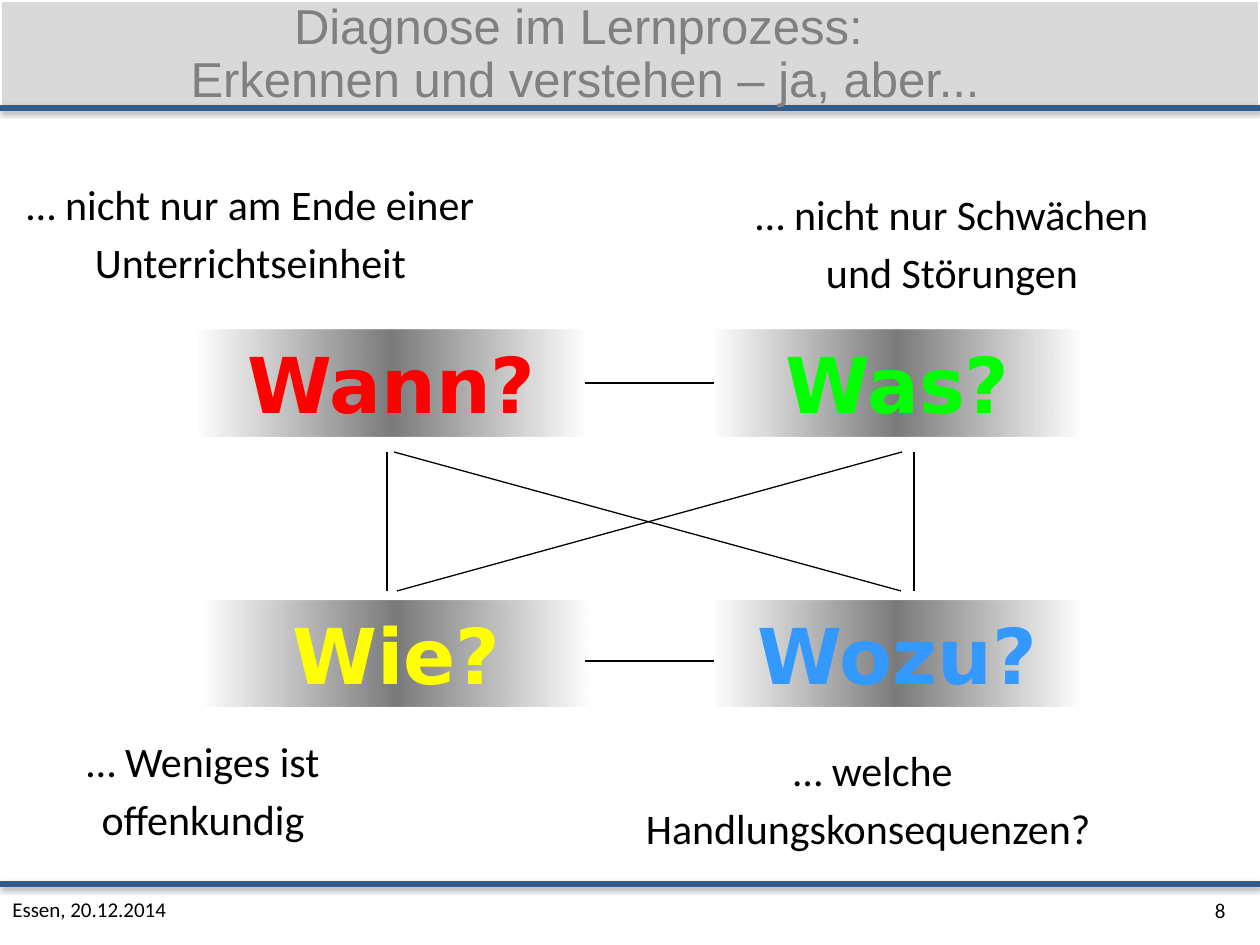
from lxml.etree import SubElement
from pptx import Presentation
from pptx.dml.color import RGBColor
from pptx.enum.shapes import MSO_CONNECTOR, MSO_SHAPE
from pptx.enum.text import MSO_ANCHOR, MSO_AUTO_SIZE, PP_ALIGN
from pptx.oxml import parse_xml
from pptx.oxml.ns import nsdecls, qn
from pptx.util import Emu, Pt

BLACK = RGBColor(0x00, 0x00, 0x00)
WHITE = RGBColor(0xFF, 0xFF, 0xFF)
BAND_GREY = RGBColor(0xD9, 0xD9, 0xD9)
TITLE_GREY = RGBColor(0x80, 0x80, 0x80)
RULE_BLUE = RGBColor(0x34, 0x5A, 0x8A)
RED = RGBColor(0xFF, 0x00, 0x00)
GREEN = RGBColor(0x00, 0xFF, 0x00)
YELLOW = RGBColor(0xFF, 0xFF, 0x00)
SKY = RGBColor(0x33, 0x99, 0xFF)

LEFT_SIDE, RIGHT_SIDE = 1, 3


def px(*lengths):
    return [Emu(round(length * 914400 / 126)) for length in lengths]


class SlideBuilder:
    BODY_FONT = "Calibri"
    WORD_FONT = "DejaVu Sans"
    TITLE_FONT = "Arial"

    def __init__(self, slide):
        self.shapes = slide.shapes

    def set_text(self, shape, text, font, size, color, align=PP_ALIGN.CENTER,
                 anchor=MSO_ANCHOR.TOP, spacing=None, bold=False):
        frame = shape.text_frame
        frame.text = text
        frame.word_wrap = True
        frame.vertical_anchor = anchor
        paragraph = frame.paragraphs[0]
        paragraph.alignment = align
        paragraph.line_spacing = spacing
        paragraph.space_before = Pt(0)
        for run in paragraph.runs:
            run.font.name, run.font.size = font, Pt(size)
            run.font.color.rgb, run.font.bold = color, bold

    def title(self, text, *box):
        title = self.shapes.title
        title.left, title.top, title.width, title.height = px(*box)
        self.set_text(title, text, self.TITLE_FONT, 28, TITLE_GREY,
                      anchor=MSO_ANCHOR.MIDDLE, spacing=0.9)
        title.text_frame.auto_size = MSO_AUTO_SIZE.NONE
        # Bring the title in front of the header band
        self.shapes._spTree.append(title._element)

    def band(self, *box):
        band = self.shapes.add_shape(MSO_SHAPE.RECTANGLE, *px(*box))
        band.shadow.inherit = False
        band.fill.solid()
        band.fill.fore_color.rgb = BAND_GREY
        band.line.color.rgb, band.line.width = WHITE, Pt(2)

    def line(self, x1, y1, x2, y2, color=BLACK, width=0.75):
        line = self.shapes.add_connector(MSO_CONNECTOR.STRAIGHT, *px(x1, y1, x2, y2))
        line.line.color.rgb, line.line.width = color, Pt(width)
        SubElement(line._element.spPr, qn("a:effectLst"))
        return line

    def rule(self, y):
        rule = self.line(0, y, 1260, y, RULE_BLUE, 3)
        rule._element.spPr.find(qn("a:effectLst")).append(parse_xml(
            f'<a:outerShdw {nsdecls("a")} blurRad="39370" dist="20320" dir="5400000"'
            ' rotWithShape="0"><a:srgbClr val="000000"><a:alpha val="38000"/>'
            '</a:srgbClr></a:outerShdw>'))

    def question(self, text, color, *box):
        question = self.shapes.add_shape(MSO_SHAPE.RECTANGLE, *px(*box))
        question.shadow.inherit = False
        question.line.fill.background()
        stops = "".join(
            f'<a:gs pos="{pos}000"><a:srgbClr val="000000"><a:alpha val="{alpha}000"/>'
            '</a:srgbClr></a:gs>' for pos, alpha in ((0, 0), (50, 52), (100, 0)))
        question._element.spPr.find(qn("a:prstGeom")).addnext(parse_xml(
            f'<a:gradFill {nsdecls("a")} rotWithShape="1"><a:gsLst>{stops}</a:gsLst>'
            '<a:lin ang="0" scaled="1"/></a:gradFill>'))
        self.set_text(question, text, self.WORD_FONT, 44, color, bold=True)
        question.text_frame.auto_size = MSO_AUTO_SIZE.SHAPE_TO_FIT_TEXT
        return question

    def label(self, text, size, *box, **style):
        label = self.shapes.add_textbox(*px(*box))
        self.set_text(label, text, self.BODY_FONT, size, BLACK, **style)


def main():
    prs = Presentation()
    prs.slide_width, prs.slide_height = px(1260, 945)
    page = SlideBuilder(prs.slides.add_slide(prs.slide_layouts[5]))

    # Header and footer
    page.rule(884)
    page.band(0, 0, 1260, 110)
    page.rule(108)
    page.label("8", 12, 1162, 885, 76, 50,
               align=PP_ALIGN.RIGHT, anchor=MSO_ANCHOR.MIDDLE)
    page.label("Essen, 20.12.2014", 12, 0, 884, 1260, 50,
               align=PP_ALIGN.LEFT, anchor=MSO_ANCHOR.MIDDLE)
    page.title("Diagnose im Lernprozess: \vErkennen und verstehen – ja, aber...",
               18, -14, 1134, 139)

    # Four questions
    wann = page.question("Wann?", RED, 198, 330, 387, 106)
    was = page.question("Was?", GREEN, 714, 330, 367, 106)
    page.question("Wie?", YELLOW, 203, 601, 387, 106)
    page.question("Wozu?", SKY, 714, 601, 367, 106)

    # Links between the questions
    wann_was = page.line(585, 383, 714, 383)
    wann_was.begin_connect(wann, RIGHT_SIDE)
    wann_was.end_connect(was, LEFT_SIDE)
    page.line(585, 661, 714, 661)
    for x_top, x_bottom in ((387, 387), (914, 914), (394, 901), (902, 397)):
        page.line(x_top, 452, x_bottom, 591)

    # Remarks
    for remark, *box in (
        ("… nicht nur am Ende einer Unterrichtseinheit", 0, 165, 501, 139),
        ("… nicht nur Schwächen und Störungen", 714, 175, 476, 97),
        ("… Weniges ist offenkundig", 39, 722, 328, 139),
        ("… welche Handlungskonsequenzen? ", 585, 731, 576, 129),
    ):
        page.label(remark, 24, *box, spacing=1.15)

    prs.save("out.pptx")


if __name__ == "__main__":
    main()
